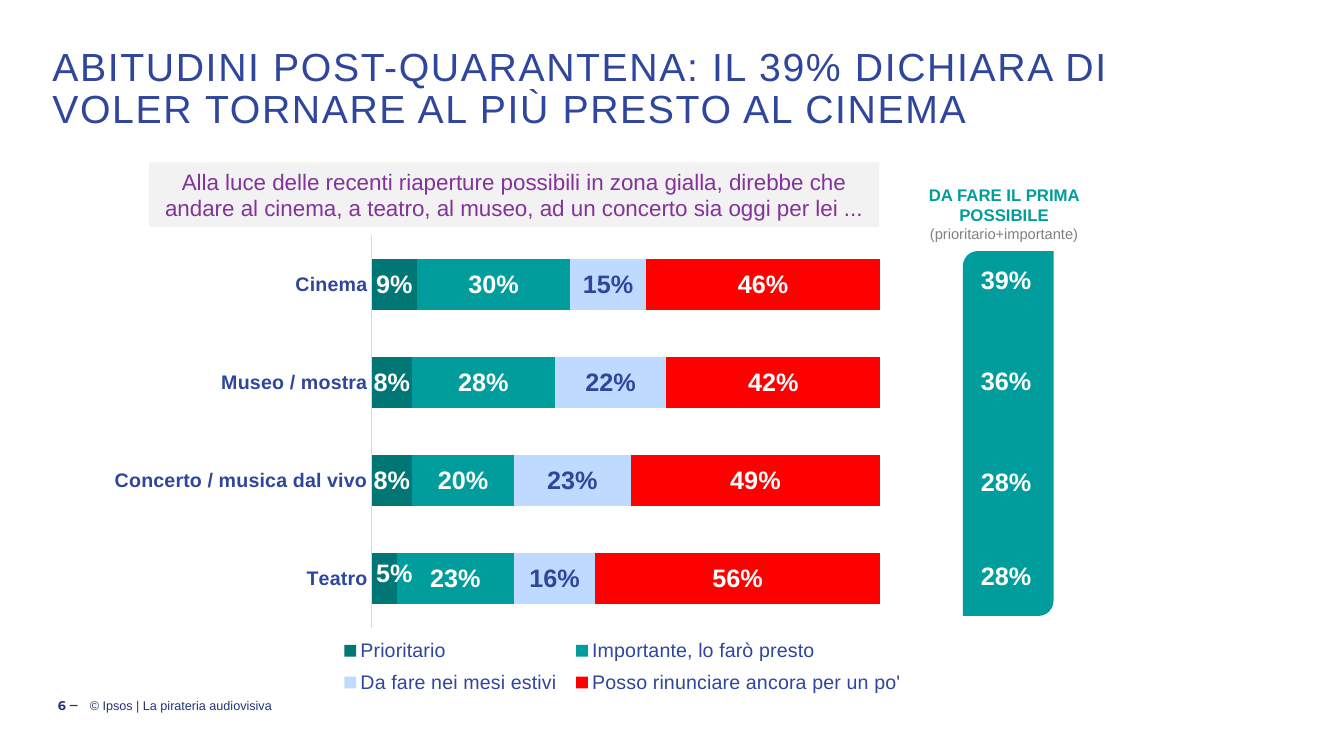
from dataclasses import dataclass
from typing import Optional

from lxml import etree
from pptx import Presentation
from pptx.chart.data import CategoryChartData
from pptx.dml.color import RGBColor
from pptx.enum.chart import XL_CHART_TYPE as Chart
from pptx.enum.chart import XL_LABEL_POSITION as LabelPos
from pptx.enum.chart import XL_LEGEND_POSITION as LegendPos
from pptx.enum.chart import XL_TICK_MARK as Tick
from pptx.enum.shapes import MSO_SHAPE as Shape
from pptx.enum.text import MSO_ANCHOR as Anchor
from pptx.enum.text import PP_ALIGN as Align
from pptx.oxml.ns import qn
from pptx.util import Inches, Pt

COLORS = {
    "blue": "2F469C", "navy": "233475", "purple": "84329B", "teal": "009D9C",
    "dark_teal": "007675", "sky": "BEDBFF", "red": "FF0000", "white": "FFFFFF",
    "pale": "F2F2F2", "gray": "808080", "axis": "D9D9D9",
}
WIDTH, HEIGHT = Inches(13.33), Inches(7.5)


@dataclass
class Box:
    """Position and size in percent of the slide."""
    x: float
    y: float
    w: float
    h: float

    def emu(self) -> list[int]:
        pairs = ((self.x, WIDTH), (self.y, HEIGHT), (self.w, WIDTH), (self.h, HEIGHT))
        return [round(share * full / 100) for share, full in pairs]


@dataclass
class Run:
    text: str
    size: float
    color: str
    bold: bool = False
    font: str = "Arial"
    spacing: float = 0


@dataclass
class TextBlock:
    box: Box
    paragraphs: list[list[Run]]
    align: Align = Align.LEFT
    anchor: Anchor = Anchor.TOP
    side_inset: float = 0.1
    line_spacing: float = 1.0
    fill: Optional[str] = None


@dataclass
class Series:
    name: str
    values: tuple[float, ...]
    color: str
    label_color: str = "white"


# Text content
FOOTER = dict(anchor=Anchor.MIDDLE, side_inset=0)
TEXTS = [
    TextBlock(Box(6.68, 90.67, 85.74, 5.33),
              [[Run("© Ipsos | La pirateria audiovisiva", 9, "navy")]], **FOOTER),
    TextBlock(Box(3.15, 90.67, 2.93, 5.33),
              [[Run("6 ‒ ", 9, "navy", True, "Montserrat")]], Align.RIGHT, **FOOTER),
    TextBlock(Box(3.3, 5.6, 93.4, 12.67),
              [[Run("ABITUDINI POST-QUARANTENA: IL 39% DICHIARA DI\n"
                    "VOLER TORNARE AL PIÙ PRESTO AL CINEMA", 28, "blue", spacing=1.2)]],
              side_inset=0.08, line_spacing=0.9),
    TextBlock(Box(11.1, 21.47, 54.31, 8.53),
              [[Run("Alla luce delle recenti riaperture possibili in zona gialla, direbbe che "
                    "andare al cinema, a teatro, al museo, ad un concerto sia oggi per lei ...",
                    16, "purple")]],
              Align.CENTER, Anchor.MIDDLE, fill="pale"),
    TextBlock(Box(68.04, 23.73, 13.35, 9.2),
              [[Run("DA FARE IL PRIMA POSSIBILE", 12, "teal", True)],
               [Run("(prioritario+importante)", 10.5, "gray")]], Align.CENTER),
]

# Chart content
CHART_BOX = Box(7.2, 26.27, 75.99, 68.8)
CATEGORIES = ["Cinema", "Museo / mostra", "Concerto / musica dal vivo", "Teatro"]
SERIES = [
    Series("Prioritario", (0.09, 0.08, 0.08, 0.05), "dark_teal"),
    Series("Importante, lo farò presto", (0.3, 0.28, 0.2, 0.23), "teal"),
    Series("Da fare nei mesi estivi", (0.15, 0.22, 0.23, 0.16), "sky", "blue"),
    Series("Posso rinunciare ancora per un po'", (0.46, 0.42, 0.49, 0.56), "red"),
]

# Totals band: text and top of each total
BAND_BOX = Box(71.64, 33.2, 6.75, 48.27)
TOTALS = [("39%", 34.27), ("36%", 47.6), ("28%", 61.07), ("28%", 73.47)]


def rgb(name: str) -> RGBColor:
    return RGBColor.from_string(COLORS[name])


def style_font(font, size: float, color: str, bold: bool = False, name: str = "Arial") -> None:
    font.size, font.bold, font.name = Pt(size), bold, name
    font.color.rgb = rgb(color)


def add_panel(s, shape: Shape, box: Box, fill: str):
    sp = s.shapes.add_shape(shape, *box.emu())
    sp.shadow.inherit = False
    sp.fill.solid()
    sp.fill.fore_color.rgb = rgb(fill)
    sp.line.fill.background()
    return sp


def add_text(s, block: TextBlock) -> None:
    if block.fill:
        sp = add_panel(s, Shape.RECTANGLE, block.box, block.fill)
    else:
        sp = s.shapes.add_textbox(*block.box.emu())
    tf = sp.text_frame
    tf.word_wrap = True
    tf.vertical_anchor = block.anchor
    tf.margin_left = tf.margin_right = Inches(block.side_inset)
    for i, runs in enumerate(block.paragraphs):
        p = tf.add_paragraph() if i else tf.paragraphs[0]
        p.alignment, p.line_spacing = block.align, block.line_spacing
        for run in runs:
            for n, line in enumerate(run.text.split("\n")):
                if n:
                    p.add_line_break()
                r = p.add_run()
                r.text = line
                style_font(r.font, run.size, run.color, run.bold, run.font)
                if run.spacing:
                    r.font._element.set("spc", str(round(run.spacing * 100)))


def set_layout(parent, index: int, **values) -> None:
    """Place a chart part by shares of the chart's size."""
    for old in parent.findall(qn("c:layout")):
        parent.remove(old)
    layout = etree.Element(qn("c:layout"))
    manual = etree.SubElement(layout, qn("c:manualLayout"))
    for tag, value in values.items():
        etree.SubElement(manual, qn(f"c:{tag}")).set("val", str(value))
    parent.insert(index, layout)


def add_bars(s) -> None:
    data = CategoryChartData(number_format="0%")
    data.categories = CATEGORIES
    for item in SERIES:
        data.add_series(item.name, item.values)
    chart = s.shapes.add_chart(Chart.BAR_STACKED, *CHART_BOX.emu(), data).chart
    style_font(chart.font, 14, "blue")
    chart.has_title = False

    # Axes
    cat, val = chart.category_axis, chart.value_axis
    cat.reverse_order = True
    cat.major_tick_mark = cat.minor_tick_mark = Tick.NONE
    cat.format.line.color.rgb = rgb("axis")
    cat.format.line.width = Pt(0.75)
    style_font(cat.tick_labels.font, 14, "blue", True)
    val.minimum_scale, val.maximum_scale, val.major_unit = 0, 1, 0.1
    val.has_major_gridlines = val.visible = False

    # Bars and labels
    plot = chart.plots[0]
    plot.gap_width, plot.overlap, plot.vary_by_categories = 90, 100, False
    for item, series in zip(SERIES, plot.series):
        series.format.fill.solid()
        series.format.fill.fore_color.rgb = rgb(item.color)
        labels = series.data_labels
        labels.show_value = True
        labels.number_format, labels.number_format_is_linked = "0%", False
        labels.position = LabelPos.CENTER
        style_font(labels.font, 18, item.label_color, True)

    # The narrow last bar has its label nudged
    style_font(plot.series[0].points[3].data_label.font, 18, "white", True)
    label = plot.series[0]._element.find(".//" + qn("c:dLbl"))
    set_layout(label, 1, x=0.01, y=-0.01)

    # Legend and plot area
    chart.has_legend = True
    legend = chart.legend
    legend.position, legend.include_in_layout = LegendPos.TOP, False
    style_font(legend.font, 14, "blue")
    edges = dict(xMode="edge", yMode="edge")
    set_layout(legend._element, 1, **edges, x=0.23, y=0.83, w=0.57, h=0.14)
    set_layout(chart._chartSpace.chart.plotArea, 0, layoutTarget="inner", **edges,
               x=0.269, y=0.071, w=0.498, h=0.754)


def main() -> None:
    prs = Presentation()
    prs.slide_width, prs.slide_height = WIDTH, HEIGHT
    s = prs.slides.add_slide(prs.slide_layouts[6])
    for block in TEXTS:
        add_text(s, block)
    add_bars(s)
    add_panel(s, Shape.ROUND_2_DIAG_RECTANGLE, BAND_BOX, "teal")
    for total, top in TOTALS:
        add_text(s, TextBlock(Box(72.24, top, 7.35, 5.33), [[Run(total, 18, "white", True)]]))
    prs.save("out.pptx")


if __name__ == "__main__":
    main()
